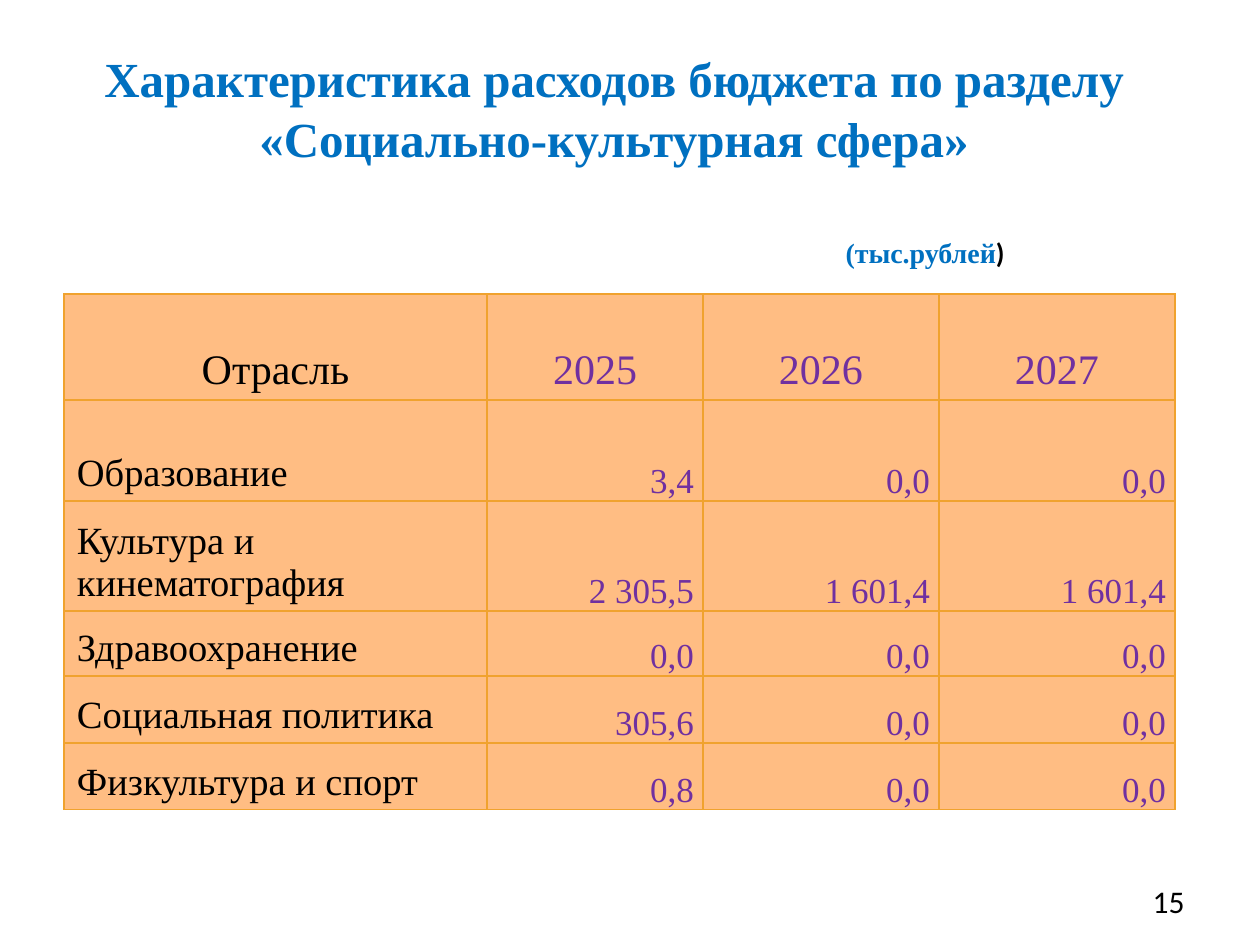
import pptx
import pptx.dml.color
import pptx.enum.text
import pptx.oxml
import pptx.oxml.ns
import pptx.util

ALIGN = pptx.enum.text.PP_ALIGN
ANCHOR = pptx.enum.text.MSO_ANCHOR


def px(length):
    return pptx.util.Emu(round(length * 914400 / 126))


def color(value):
    return pptx.dml.color.RGBColor.from_string(value)


class BudgetSlide:
    serif = "Times New Roman"
    sans = "Calibri"
    black = "000000"
    blue = "0070C0"
    purple = "7030A0"
    peach = "FFBD83"
    border = "F0A22E"

    def __init__(self, deck):
        self.slide = deck.slides.add_slide(deck.slide_layouts[5])

    def run(self, paragraph, text, size, ink, font, bold=False):
        run = paragraph.add_run()
        run.text = text
        run.font.size = pptx.util.Pt(size)
        run.font.name = font
        run.font.bold = bold
        run.font.color.rgb = color(ink)

    def title(self, heading, unit, unit_indent, box):
        title = self.slide.shapes.title
        title.left, title.top, title.width, title.height = map(px, box)
        frame = title.text_frame
        frame.word_wrap = True
        frame.auto_size = pptx.enum.text.MSO_AUTO_SIZE.NONE
        frame.vertical_anchor = ANCHOR.TOP
        first = frame.paragraphs[0]
        first.alignment = ALIGN.CENTER
        first.line_spacing = pptx.util.Pt(34)
        self.run(first, heading, 28, self.blue, self.serif, True)
        second = frame.add_paragraph()
        second.alignment = ALIGN.LEFT
        second.space_before = pptx.util.Pt(39)
        properties = second._p.get_or_add_pPr()
        properties.set("marL", str(px(unit_indent)))
        properties.set("indent", "0")
        self.run(second, unit, 16, self.blue, self.serif, True)
        self.run(second, ")", 16, self.black, self.sans, True)

    def page_number(self, number, box):
        frame = self.slide.shapes.add_textbox(*map(px, box)).text_frame
        frame.word_wrap = True
        frame.vertical_anchor = ANCHOR.MIDDLE
        frame.paragraphs[0].alignment = ALIGN.RIGHT
        self.run(frame.paragraphs[0], number, 18, self.black, self.sans)

    def cell(self, cell, text, size, ink, align, margins):
        cell.margin_left = cell.margin_right = px(margins[0])
        cell.margin_top = cell.margin_bottom = px(margins[1])
        cell.vertical_anchor = ANCHOR.BOTTOM
        paragraph = cell.text_frame.paragraphs[0]
        paragraph.alignment = align
        self.run(paragraph, text, size, ink, self.serif)
        properties = cell._tc.get_or_add_tcPr()
        for side in ("lnL", "lnR", "lnT", "lnB"):
            properties.append(pptx.oxml.parse_xml(
                f'<a:{side} {pptx.oxml.ns.nsdecls("a")} w="10000"><a:solidFill>'
                f'<a:srgbClr val="{self.border}"/></a:solidFill></a:{side}>'))
        cell.fill.solid()
        cell.fill.fore_color.rgb = color(self.peach)

    def table(self, rows, left, top, widths, heights):
        table = self.slide.shapes.add_table(
            len(heights), len(widths), px(left), px(top),
            px(sum(widths)), px(sum(heights))).table
        table.first_row = table.horz_banding = False
        for column, width in zip(table.columns, widths):
            column.width = px(width)
        for row, height in zip(table.rows, heights):
            row.height = px(height)
        for r, values in enumerate(rows):
            for c, text in enumerate(values):
                ink = self.purple if c else self.black
                if r == 0:
                    style = 24, ink, ALIGN.CENTER, (13, 6)
                elif c == 0:
                    style = 22, ink, ALIGN.LEFT, (13, 6)
                else:
                    style = 20, ink, ALIGN.RIGHT, (9, 0)
                self.cell(table.cell(r, c), text, *style)


def main():
    deck = pptx.Presentation()
    deck.slide_width, deck.slide_height = px(1260), px(945)
    budget = BudgetSlide(deck)
    budget.page_number("15", (903, 876, 294, 50))
    budget.title(
        "Характеристика расходов бюджета по разделу «Социально-культурная сфера»",
        "(тыс.рублей", 770, (63, 42, 1102, 242))
    spending = [
        ("Отрасль", "2025", "2026", "2027"),
        ("Образование", "3,4", "0,0", "0,0"),
        ("Культура и кинематография", "2 305,5", "1 601,4", "1 601,4"),
        ("Здравоохранение", "0,0", "0,0", "0,0"),
        ("Социальная политика", "305,6", "0,0", "0,0"),
        ("Физкультура и спорт", "0,8", "0,0", "0,0"),
    ]
    budget.table(spending, 64, 294, (423, 216, 236, 236),
                 (106, 101, 110, 65, 67, 67))
    deck.save("out.pptx")


if __name__ == "__main__":
    main()
